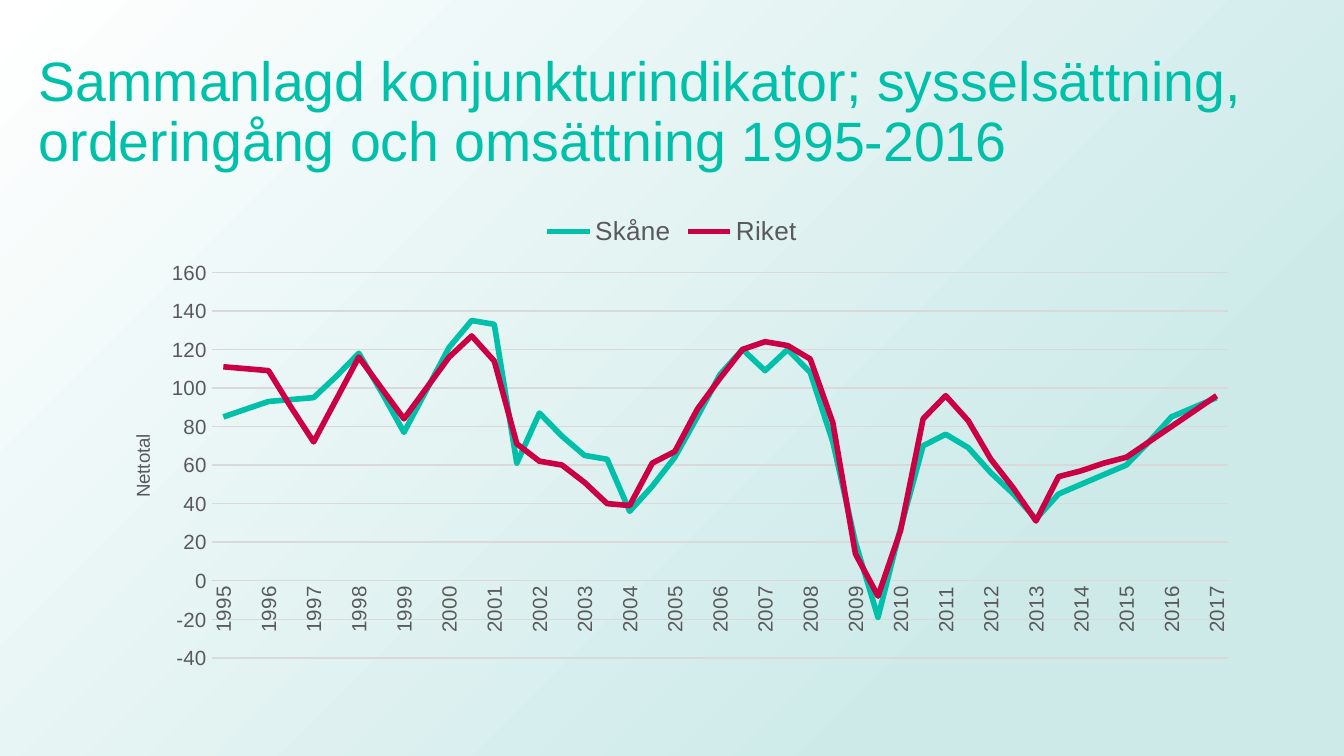
import pptx
import pptx.util
import pptx.dml.color
import pptx.chart.data
import pptx.enum.chart
import pptx.enum.shapes
import pptx.enum.text
import pptx.oxml

Pt = pptx.util.Pt
COLOURS = {"teal": "00C0A9", "red": "CB0044", "grey": "595959",
           "grid": "D9D9D9", "mist": "CDEAE9", "white": "FFFFFF"}
FONT = "Arial"
SERIES = {
    "Skåne": ("teal", [
        85, 89, 93, 94, 95, 106, 118, 98, 77, 99, 121, 135, 133, 61, 87,
        75, 65, 63, 36, 49, 64, 85, 107, 120, 109, 120, 108, 72, 20, -19,
        27, 70, 76, 69, 56, 45, 32, 45, 50, 55, 60, 72, 85, 90, 95]),
    "Riket": ("red", [
        111, 110, 109, 90, 72, 94, 116, 100, 84, 100, 116, 127, 114, 71, 62,
        60, 51, 40, 39, 61, 67, 89, 105, 120, 124, 122, 115, 82, 14, -8,
        26, 84, 96, 83, 63, 48, 31, 54, 57, 61, 64, 72, 80, 88, 96]),
}


def rgb(name):
    return pptx.dml.color.RGBColor.from_string(COLOURS[name])


def format_font(font, size, colour):
    font.name, font.size, font.bold = FONT, Pt(size), False
    font.color.rgb = rgb(colour)


def write_text(frame, text, size, colour, spacing=None):
    para = frame.paragraphs[0]
    para.line_spacing = spacing
    span = para.add_run()
    span.text = text
    format_font(span.font, size, colour)


def format_line(line, colour, width):
    line.color.rgb = rgb(colour)
    line.width = Pt(width)


def add_layout(parent, position, left, top, width=None, height=None, inner=False):
    """Place a chart part by fractions of the chart's box."""
    sizes = {"x": left, "y": top, "w": width, "h": height}
    tags = '<c:layoutTarget val="inner"/>' if inner else ""
    tags += "".join(f'<c:{key}Mode val="edge"/>' for key in "xy")
    tags += "".join(f'<c:{key} val="{value}"/>'
                    for key, value in sizes.items() if value is not None)
    for old in parent.findall(pptx.oxml.ns.qn("c:layout")):
        parent.remove(old)
    parent.insert(position, pptx.oxml.parse_xml(
        f'<c:layout {pptx.oxml.ns.nsdecls("c")}><c:manualLayout>{tags}'
        '</c:manualLayout></c:layout>'))


def add_background(page, left, top, width, height):
    box = page.shapes.add_shape(pptx.enum.shapes.MSO_SHAPE.RECTANGLE,
                                left, top, width, height)
    box.shadow.inherit = False
    box.line.fill.background()
    # Radial gradient that starts in the lower right corner
    box.fill.gradient()
    gradient = box.fill.gradient_stops
    for stop, colour, position in zip(gradient, ("mist", "white"), (0.23, 1)):
        stop.color.rgb = rgb(colour)
        stop.position = position
    fill = box._element.spPr.find(pptx.oxml.ns.qn("a:gradFill"))
    fill.replace(fill.find(pptx.oxml.ns.qn("a:lin")), pptx.oxml.parse_xml(
        f'<a:path {pptx.oxml.ns.nsdecls("a")} path="circle">'
        '<a:fillToRect l="100000" t="100000"/></a:path>'))


def add_title(page, left, top, width, height):
    frame = page.shapes.add_textbox(left, top, width, height).text_frame
    frame.word_wrap = True
    frame.vertical_anchor = pptx.enum.text.MSO_ANCHOR.MIDDLE
    write_text(frame, "Sammanlagd konjunkturindikator; sysselsättning, "
               "orderingång och omsättning 1995-2016", 29.7, "teal", 0.9)


def add_indicator_chart(page, left, top, width, height):
    # Two half-year values for each year, ending with the first of 2017
    data = pptx.chart.data.CategoryChartData(number_format="0")
    count = len(SERIES["Skåne"][1])
    data.categories = [str(1995 + index // 2) for index in range(count)]
    for name, (_, values) in SERIES.items():
        data.add_series(name, values)
    chart = page.shapes.add_chart(pptx.enum.chart.XL_CHART_TYPE.LINE,
                                  left, top, width, height, data).chart
    chart.has_title = False
    format_font(chart.font, 10, "grey")
    plot = chart.plots[0]
    plot.vary_by_categories = False
    for series in plot.series:
        series.smooth = False
        series.marker.style = pptx.enum.chart.XL_MARKER_STYLE.NONE
        format_line(series.format.line, SERIES[series.name][0], 3)

    # Legend
    chart.has_legend = True
    chart.legend.position = pptx.enum.chart.XL_LEGEND_POSITION.TOP
    chart.legend.include_in_layout = False
    format_font(chart.legend.font, 14, "grey")

    # Axes
    years, totals = chart.category_axis, chart.value_axis
    for axis in (years, totals):
        axis.major_tick_mark = pptx.enum.chart.XL_TICK_MARK.NONE
        axis.minor_tick_mark = pptx.enum.chart.XL_TICK_MARK.NONE
        format_font(axis.tick_labels.font, 11, "grey")
    format_line(years.format.line, "grid", 0.75)
    years._element.txPr.bodyPr.set("rot", "-5400000")
    skip = pptx.oxml.parse_xml(
        f'<c:tickLblSkip {pptx.oxml.ns.nsdecls("c")} val="2"/>')
    years._element.find(pptx.oxml.ns.qn("c:noMultiLvlLbl")).addprevious(skip)
    totals.minimum_scale, totals.maximum_scale, totals.major_unit = -40, 160, 20
    totals.tick_labels.number_format = "0"
    totals.tick_labels.number_format_is_linked = False
    totals.format.line.fill.background()
    format_line(totals.major_gridlines.format.line, "grid", 0.75)

    # Axis title and plot area
    title = totals.axis_title
    write_text(title.text_frame, "Nettotal", 10, "grey")
    body = title.text_frame._txBody.bodyPr
    body.set("rot", "-5400000")
    body.set("vert", "horz")
    add_layout(title._element, 1, 0.03, 0.48)
    area = chart._chartSpace.chart.plotArea
    add_layout(area, 0, 0.103, 0.148, 0.877, 0.806, inner=True)


def main():
    deck = pptx.Presentation()
    deck.slide_width, deck.slide_height = Pt(720), Pt(405)
    page = deck.slides.add_slide(deck.slide_layouts[6])
    add_background(page, 0, 0, deck.slide_width, deck.slide_height)
    add_title(page, Pt(13.7), Pt(21.6), Pt(721.4), Pt(78.5))
    add_indicator_chart(page, Pt(49.7), Pt(108), Pt(620.6), Pt(256.3))
    deck.save("out.pptx")


if __name__ == "__main__":
    main()
